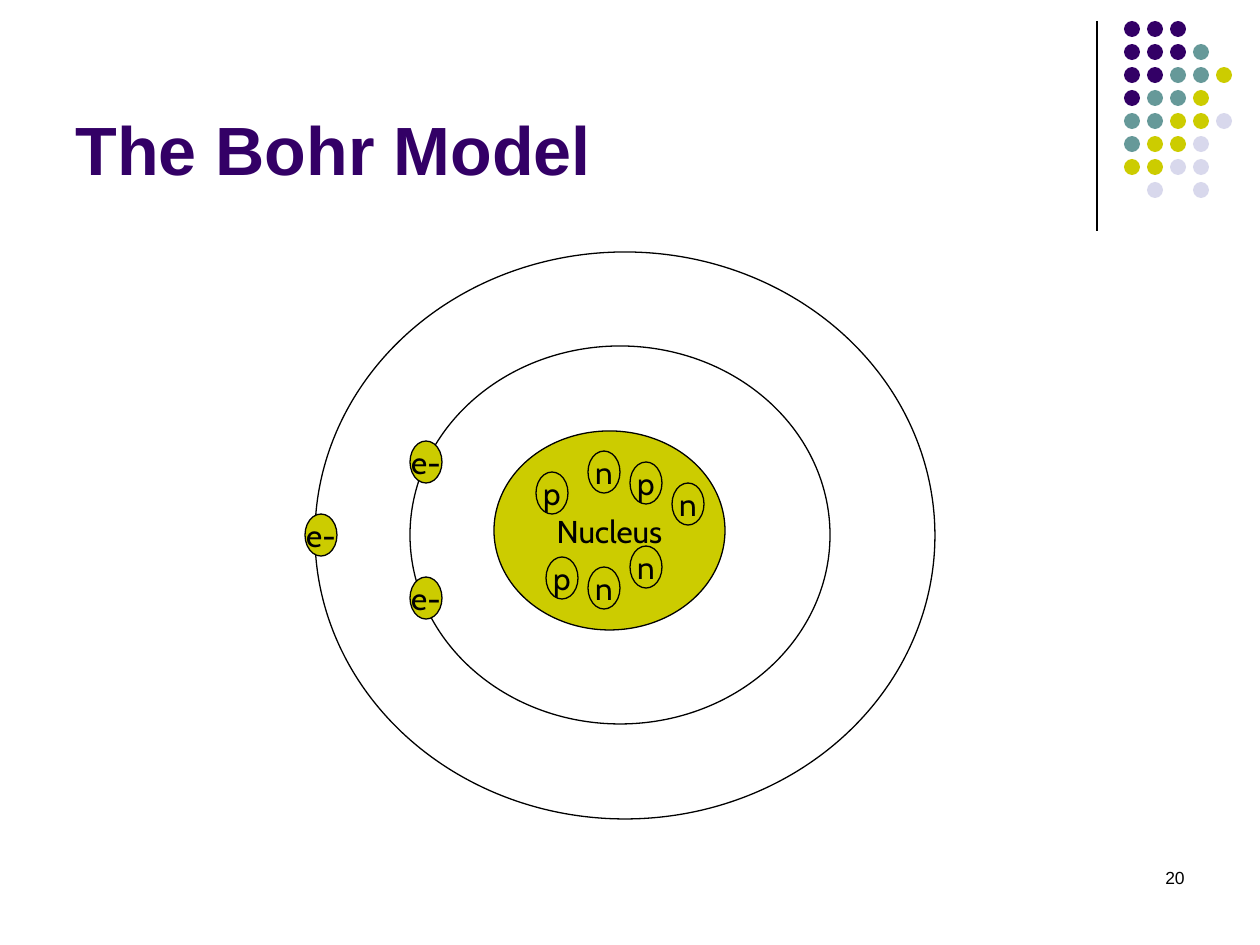
from dataclasses import dataclass

from lxml.etree import SubElement
from pptx import Presentation
from pptx.dml.color import RGBColor
from pptx.enum.shapes import MSO_CONNECTOR as CONN, MSO_SHAPE as SHAPE
from pptx.enum.text import MSO_ANCHOR as ANCHOR, PP_ALIGN as ALIGN
from pptx.oxml.ns import qn
from pptx.util import Emu, Pt


@dataclass(frozen=True)
class Theme:
    """Colours, fonts and type sizes of the slide."""
    purple: str = "330066"
    teal: str = "669999"
    olive: str = "CCCC00"
    lilac: str = "D8D8EC"
    black: str = "000000"
    heading_font: str = "Arial"
    label_font: str = "Cabin"
    title_size: int = 39
    label_size: int = 18
    number_size: int = 10
    line_width: float = 0.75


T = Theme()
EMU_PER_PX = 914400 / 126
DOT_COLORS = {"P": T.purple, "T": T.teal, "O": T.olive, "L": T.lilac}
DOT_ROWS = ["PPP", "PPPT", "PPTTO", "PTTO", "TTOOL", "TOOL", "OOLL", " L L"]
DOT_SIZE, DOT_PITCH = 16, 23
ORBITS = [(410, 346, 420, 378), (315, 252, 620, 567)]
PARTICLE_SIZE = (32, 42)
PARTICLES = {
    "p": [(546, 557), (536, 472), (630, 462)],
    "n": [(672, 483), (588, 451), (630, 546), (588, 567)],
    "e-": [(410, 441), (305, 514), (410, 577)],
}


def px(*values):
    """Turn pixel lengths into EMU."""
    return [Emu(round(v * EMU_PER_PX)) for v in values]


def rgb(color):
    """Turn a hex string into a colour."""
    return RGBColor.from_string(color)


def set_text(s, text, size, font=T.heading_font, color=T.black, bold=False,
             align=ALIGN.LEFT, anchor=ANCHOR.TOP, wrap=True):
    """Write one formatted line of text into a shape."""
    tf = s.text_frame
    tf.word_wrap, tf.vertical_anchor = wrap, anchor
    p = tf.paragraphs[0]
    p.alignment = align
    r = p.add_run()
    r.text = text
    r.font.size, r.font.name, r.font.bold = Pt(size), font, bold
    r.font.color.rgb = rgb(color)


def add_ellipse(shapes, box, fill=None, line=None, label=None):
    """Add an ellipse with optional fill, outline and centred label."""
    s = shapes.add_shape(SHAPE.OVAL, *px(*box))
    s.shadow.inherit = False
    if fill:
        s.fill.solid()
        s.fill.fore_color.rgb = rgb(fill)
    else:
        s.fill.background()
    if line:
        s.line.color.rgb = rgb(line)
        s.line.width = Pt(T.line_width)
    else:
        s.line.fill.background()
    if label:
        set_text(s, label, T.label_size, font=T.label_font,
                 align=ALIGN.CENTER, anchor=ANCHOR.MIDDLE, wrap=False)


def add_line(shapes, *ends):
    """Add a thin black straight line."""
    s = shapes.add_connector(CONN.STRAIGHT, *px(*ends))
    s.line.color.rgb = rgb(T.black)
    s.line.width = Pt(T.line_width)
    SubElement(s._element.spPr, qn("a:effectLst"))


def add_text(shapes, box, text, size, **fmt):
    """Add a text box."""
    set_text(shapes.add_textbox(*px(*box)), text, size, **fmt)


def add_dots(shapes, left, top):
    """Add the grouped grid of coloured dots."""
    group = shapes.add_group_shape()
    for i, row in enumerate(DOT_ROWS):
        for j, key in enumerate(row):
            if key in DOT_COLORS:
                box = (left + j * DOT_PITCH, top + i * DOT_PITCH, DOT_SIZE, DOT_SIZE)
                add_ellipse(group.shapes, box, fill=DOT_COLORS[key])


def add_atom(shapes):
    """Add the nucleus, the orbits and the particles."""
    add_ellipse(shapes, (494, 431, 231, 199), T.olive, T.black, "Nucleus")
    for box in ORBITS:
        add_ellipse(shapes, box, line=T.black)
    for label, places in PARTICLES.items():
        for place in places:
            add_ellipse(shapes, place + PARTICLE_SIZE, T.olive, T.black, label)


def main():
    """Build and save the slide."""
    prs = Presentation()
    prs.slide_width, prs.slide_height = px(1260, 945)
    shapes = prs.slides.add_slide(prs.slide_layouts[6]).shapes
    add_line(shapes, 1097, 21, 1097, 231)
    add_dots(shapes, 1124, 21)
    add_text(shapes, (63, 16, 1040, 179), "The Bohr Model", T.title_size,
             color=T.purple, bold=True, anchor=ANCHOR.BOTTOM)
    add_atom(shapes)
    add_text(shapes, (903, 861, 294, 63), "20", T.number_size, align=ALIGN.RIGHT)
    prs.save("out.pptx")


if __name__ == "__main__":
    main()
